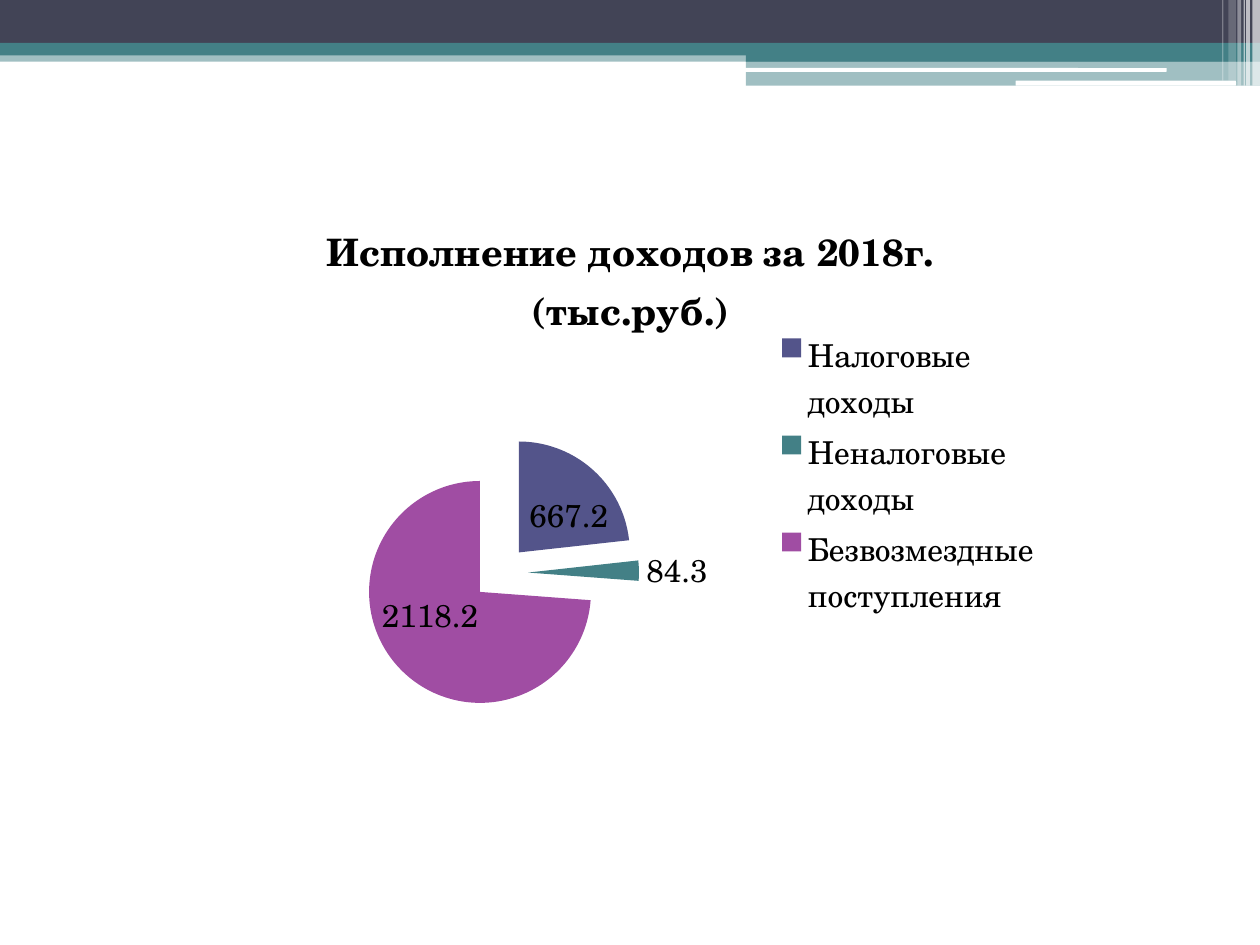
import pptx
import pptx.util
import pptx.chart.data
from pptx.dml.color import RGBColor
from pptx.enum.chart import XL_CHART_TYPE, XL_LABEL_POSITION, XL_LEGEND_POSITION
from pptx.enum.shapes import MSO_SHAPE
from pptx.oxml import parse_xml
from pptx.oxml.ns import nsdecls, qn

FONT = "TeX Gyre Schola"
BLACK = RGBColor(0x00, 0x00, 0x00)
WHITE = RGBColor(0xFF, 0xFF, 0xFF)
SLATE = RGBColor(0x42, 0x44, 0x56)
TEAL = RGBColor(0x43, 0x80, 0x86)
INDIGO = RGBColor(0x53, 0x54, 0x8A)
PURPLE = RGBColor(0xA0, 0x4D, 0xA3)

WIDTH, HEIGHT = 10, 7.5

# Content
TITLE = "Исполнение доходов за 2018г. (тыс.руб.)"
INCOME = [
    ("Налоговые доходы", 667.2, INDIGO),
    ("Неналоговые доходы", 84.3, TEAL),
    ("Безвозмездные поступления", 2118.2, PURPLE),
]

# Header bands: left, top, width, height, colour, opacity %
RIGHT = 5.92
BANDS = [
    (0, 0.4, WIDTH, 0.09, TEAL, 50),
    (0, 0, WIDTH, 0.34, SLATE, 100),
    (0, 0.34, WIDTH, 0.1, TEAL, 100),
    (RIGHT, 0.39, WIDTH - RIGHT, 0.1, TEAL, 100),
    (RIGHT, 0.48, WIDTH - RIGHT, 0.2, TEAL, 50),
]
# Rounded white rules: left, top, width, height
RULES = [(5.91, 0.54, 3.35, 0.03), (8.06, 0.64, 1.75, 0.04)]
# Vertical white stripes: left, width, height, opacity %
STRIPES = [
    (9.94, 0.06, 0.68, 65),
    (9.89, 0.03, 0.68, 65),
    (9.87, 0.01, 0.68, 60),
    (9.82, 0.03, 0.68, 40),
    (9.75, 0.06, 0.64, 20),
    (9.7, 0.01, 0.64, 30),
]

# Chart area as shares of the slide; its parts as shares of the chart
CHART_BOX = (1.67 / WIDTH, 1.53 / HEIGHT, 6.67 / WIDTH, 4.44 / HEIGHT)
PIE_BOX = (0.18, 0.43, 0.33, 0.5)
LEGEND_BOX = (0.67, 0.24, 0.32, 0.53)


def add_bar(shapes, box, color, opacity=100, kind=MSO_SHAPE.RECTANGLE):
    s = shapes.add_shape(kind, *map(pptx.util.Inches, box))
    s.shadow.inherit = False
    s.fill.solid()
    s.fill.fore_color.rgb = color
    s.line.fill.background()
    if opacity < 100:
        clr = s.fill._xPr.find(qn("a:solidFill"))[0]
        clr.append(parse_xml(f'<a:alpha {nsdecls("a")} val="{opacity * 1000}"/>'))


def layout_xml(box, inner=False):
    target = '<c:layoutTarget val="inner"/>' if inner else ""
    modes = "".join(f'<c:{k}Mode val="edge"/>' for k in "xy")
    sizes = "".join(f'<c:{k} val="{v}"/>' for k, v in zip("xywh", box))
    return parse_xml(f'<c:layout {nsdecls("c")}><c:manualLayout>{target}{modes}{sizes}'
                     '</c:manualLayout></c:layout>')


def set_font(font, size, bold=False):
    font.name, font.size, font.bold = FONT, pptx.util.Pt(size), bold
    font.color.rgb = BLACK


def add_income_chart(shapes):
    data = pptx.chart.data.CategoryChartData()
    data.categories = [name for name, _, _ in INCOME]
    data.add_series("Series 1", [value for _, value, _ in INCOME])
    x, y, w, h = CHART_BOX
    box = (x * WIDTH, y * HEIGHT, w * WIDTH, h * HEIGHT)
    chart = shapes.add_chart(XL_CHART_TYPE.PIE, *map(pptx.util.Inches, box), data).chart
    set_font(chart.font, 18)

    # Title
    chart.has_title = True
    tf = chart.chart_title.text_frame
    tf.text = TITLE
    set_font(tf.paragraphs[0].runs[0].font, 21.6, bold=True)

    # Legend
    chart.has_legend = True
    legend = chart.legend
    legend.position = XL_LEGEND_POSITION.RIGHT
    legend.include_in_layout = False
    set_font(legend.font, 18)
    el = legend._element
    for old in el.findall(qn("c:layout")):
        el.remove(old)
    el.find(qn("c:legendPos")).addnext(layout_xml(LEGEND_BOX))

    # Exploded slices with values
    plot = chart.plots[0]
    plot.vary_by_categories = True
    series = plot.series[0]
    series._element.find(qn("c:tx")).addnext(
        parse_xml(f'<c:explosion {nsdecls("c")} val="25"/>'))
    for i, (_, _, color) in enumerate(INCOME):
        fill = series.points[i].format.fill
        fill.solid()
        fill.fore_color.rgb = color
    plot.has_data_labels = True
    labels = plot.data_labels
    labels.show_value = True
    labels.position = XL_LABEL_POSITION.BEST_FIT
    set_font(labels.font, 18)

    # Pie position
    area = chart._chartSpace.chart.plotArea
    for old in area.findall(qn("c:layout")):
        area.remove(old)
    area.insert(0, layout_xml(PIE_BOX, inner=True))


def main():
    prs = pptx.Presentation()
    prs.slide_width = pptx.util.Inches(WIDTH)
    prs.slide_height = pptx.util.Inches(HEIGHT)
    shapes = prs.slides.add_slide(prs.slide_layouts[6]).shapes

    # Header decoration
    for *box, color, opacity in BANDS:
        add_bar(shapes, box, color, opacity)
    for box in RULES:
        add_bar(shapes, box, WHITE, kind=MSO_SHAPE.ROUNDED_RECTANGLE)
    for left, width, height, opacity in STRIPES:
        add_bar(shapes, (left, 0, width, height), WHITE, opacity)

    add_income_chart(shapes)
    prs.save("out.pptx")


if __name__ == "__main__":
    main()
